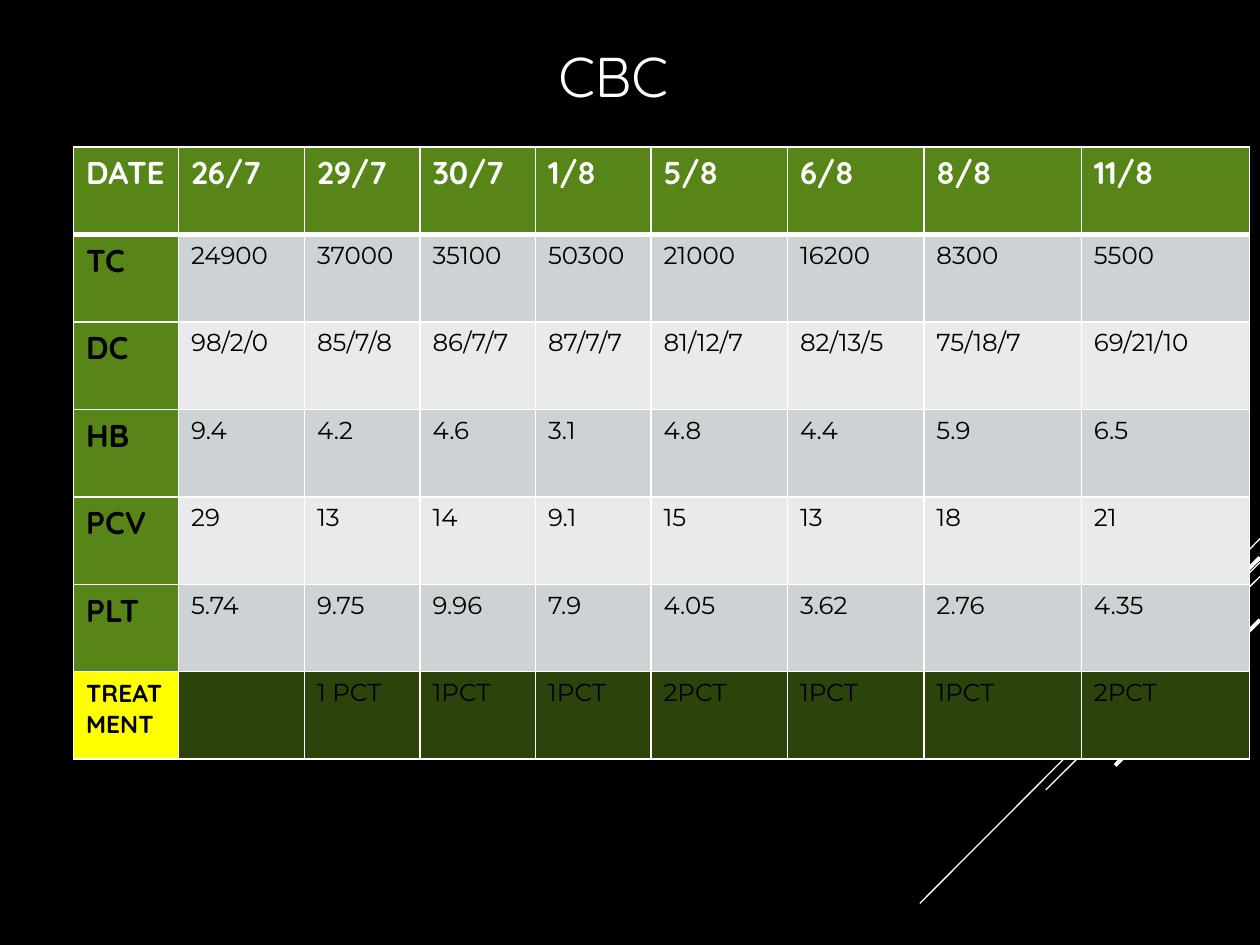
from dataclasses import dataclass

from lxml.etree import SubElement as Sub
from pptx import Presentation
from pptx.dml.color import RGBColor as Rgb
from pptx.enum.shapes import MSO_CONNECTOR as Link
from pptx.enum.text import MSO_ANCHOR as Anchor
from pptx.oxml.ns import qn
from pptx.util import Inches, Pt

HUES = {
    "back": "000000", "ink": "000000", "white": "FFFFFF", "head": "588517",
    "odd": "CDD2D5", "even": "E8EAEB", "mark": "FFFF00", "care": "2C430C",
}
WIDE, HIGH = Inches(10), Inches(7.5)
UNIT = WIDE / 120
LEFT, TOP, TALL = 7, 14, 25 / 3
COLS = [10, 12, 11, 11, 11, 13, 13, 15, 16]
ROWS = [
    "DATE 26/7 29/7 30/7 1/8 5/8 6/8 8/8 11/8".split(),
    "TC 24900 37000 35100 50300 21000 16200 8300 5500".split(),
    "DC 98/2/0 85/7/8 86/7/7 87/7/7 81/12/7 82/13/5 75/18/7 69/21/10".split(),
    "HB 9.4 4.2 4.6 3.1 4.8 4.4 5.9 6.5".split(),
    "PCV 29 13 14 9.1 15 13 18 21".split(),
    "PLT 5.74 9.75 9.96 7.9 4.05 3.62 2.76 4.35".split(),
    ["TREATMENT", "", "1 PCT", "1PCT", "1PCT", "2PCT", "1PCT", "1PCT", "2PCT"],
]
LAST = len(ROWS) - 1


@dataclass
class Ray:
    x1: float
    y1: float
    x2: float
    y2: float
    width: float = 0.75


@dataclass
class Look:
    fill: str
    size: int = 14
    face: str = "Montserrat"
    hue: str = "ink"
    bold: bool = False


RAYS = [
    Ray(1, 0.57, 0.92, 0.68),
    Ray(1, 0.595, 0.73, 0.956),
    Ray(1, 0.61, 0.83, 0.836),
    Ray(1, 0.59, 0.84, 0.8, 2.25),
    Ray(1, 0.656, 0.885, 0.81, 2.25),
]


def tint(name: str) -> Rgb:
    return Rgb.from_string(HUES[name])


def units(count: float) -> int:
    return round(count * UNIT)


def draw_ray(slide, ray: Ray) -> None:
    line = slide.shapes.add_connector(
        Link.STRAIGHT, round(ray.x1 * WIDE), round(ray.y1 * HIGH),
        round(ray.x2 * WIDE), round(ray.y2 * HIGH))
    line.line.color.rgb = tint("white")
    line.line.width = Pt(ray.width)
    Sub(line._element.spPr, qn("a:effectLst"))


def set_font(text, look: Look) -> None:
    font = text.font
    font.name, font.size, font.bold = look.face, Pt(look.size), look.bold
    font.color.rgb = tint(look.hue)


def draw_title(slide, text: str) -> None:
    box = slide.shapes.add_textbox(units(52), units(3), units(20), units(8.3))
    frame = box.text_frame
    frame.word_wrap = True
    frame.vertical_anchor = Anchor.MIDDLE
    frame.text = text
    set_font(frame.paragraphs[0], Look("back", 32, "Quicksand", "white"))


def pick_look(row: int, col: int) -> Look:
    if row == 0:
        return Look("head", 18, "Quicksand", "white", True)
    if col == 0:
        fill, size = ("mark", 14) if row == LAST else ("head", 18)
        return Look(fill, size, "Quicksand", bold=True)
    if row == LAST:
        return Look("care")
    return Look("odd" if row % 2 else "even")


def set_edges(cell, row: int) -> None:
    props = cell._tc.get_or_add_tcPr()
    thick = {0: "B", 1: "T"}.get(row)
    for side in "LRTB":
        width = Pt(3 if side == thick else 1)
        edge = Sub(props, qn(f"a:ln{side}"), w=str(width))
        fill = Sub(edge, qn("a:solidFill"))
        Sub(fill, qn("a:srgbClr"), val=HUES["white"])


def draw_table(slide) -> None:
    table = slide.shapes.add_table(
        len(ROWS), len(COLS), units(LEFT), units(TOP),
        units(sum(COLS)), units(TALL * len(ROWS))).table
    for col, width in zip(table.columns, COLS):
        col.width = units(width)
    for r, texts in enumerate(ROWS):
        table.rows[r].height = units(TALL)
        for c, text in enumerate(texts):
            cell, look = table.cell(r, c), pick_look(r, c)
            set_edges(cell, r)
            cell.fill.solid()
            cell.fill.fore_color.rgb = tint(look.fill)
            cell.text = text
            set_font(cell.text_frame.paragraphs[0], look)


def main() -> None:
    deck = Presentation()
    deck.slide_width, deck.slide_height = WIDE, HIGH
    slide = deck.slides.add_slide(deck.slide_layouts[6])
    slide.background.fill.solid()
    slide.background.fill.fore_color.rgb = tint("back")
    for ray in RAYS:
        draw_ray(slide, ray)
    draw_title(slide, "CBC")
    draw_table(slide)
    deck.save("out.pptx")


if __name__ == "__main__":
    main()
